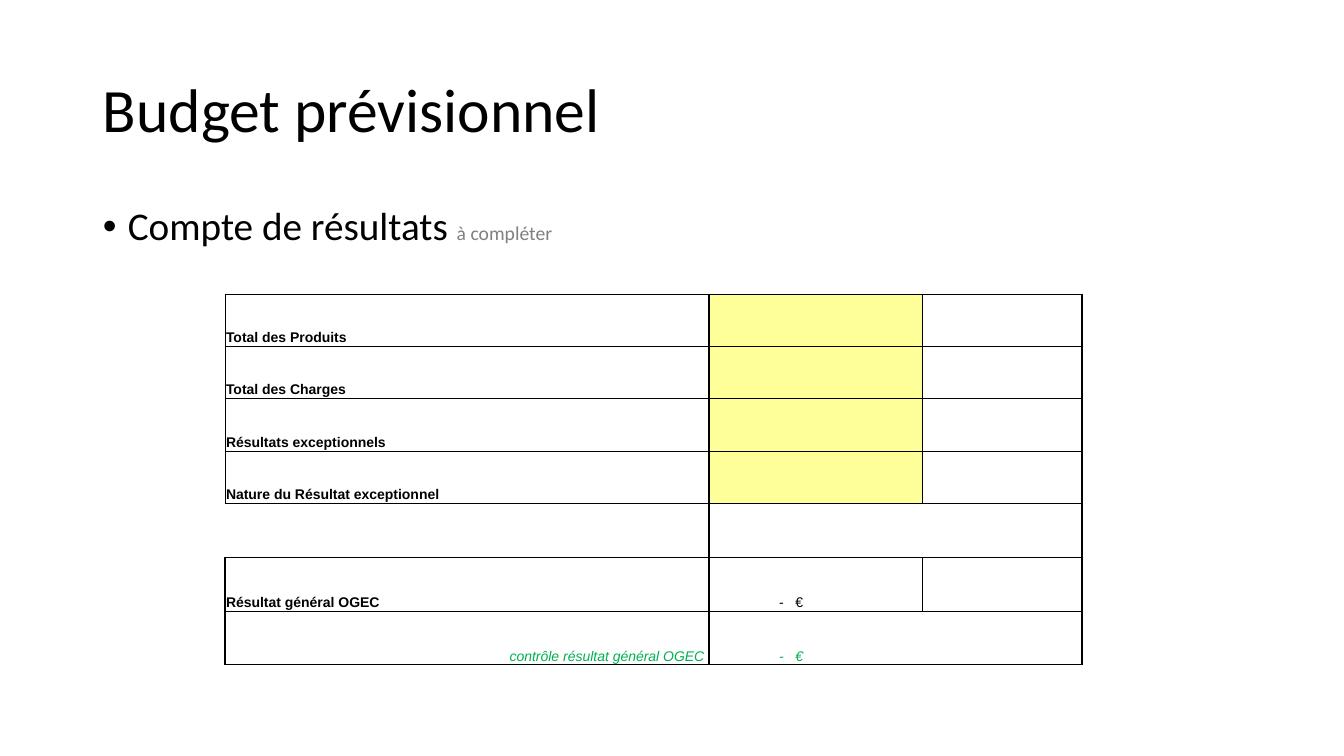
import pptx
import pptx.dml.color
import pptx.enum.text
import pptx.oxml
import pptx.oxml.ns
import pptx.util
from lxml import etree

RGBColor = pptx.dml.color.RGBColor
ANCHOR = pptx.enum.text.MSO_ANCHOR
ALIGN = pptx.enum.text.PP_ALIGN

BLACK = RGBColor(0x00, 0x00, 0x00)
GREY = RGBColor(0x80, 0x80, 0x80)
GREEN = RGBColor(0x00, 0xB0, 0x50)
YELLOW = RGBColor(0xFF, 0xFF, 0x99)
WHITE = RGBColor(0xFF, 0xFF, 0xFF)

SLIDE_SIZE = (1344, 756)
EMU_PER_PX = 914400 * 10 / 1008

COLUMN_WIDTHS = (484, 213, 160)
ROW_HEIGHTS = (52, 52, 53, 52, 55, 53, 54)
INPUT_LABELS = ("Total des Produits", "Total des Charges",
                "Résultats exceptionnels", "Nature du Résultat exceptionnel")
SPACER_ROW, RESULT_ROW, CHECK_ROW = 4, 5, 6

# Line weights in points, 0 for none: four vertical edges per row,
# then one horizontal edge above each row and one below the last.
VERTICAL_EDGES = [(0.5, 1, 0.5, 1)] * 4 + [(0, 1, 0, 1), (1, 1, 0.5, 1), (1, 1, 0, 1)]
HORIZONTAL_EDGES = (0.5, 0.5, 0.5, 0.5, 0.5, 1, 0.5, 1)


def px(length):
    return pptx.util.Emu(round(length * EMU_PER_PX))


def add_text(paragraph, text, *, font="Calibri", size=10, color=BLACK,
             bold=False, italic=False, spacing=0):
    """Append a run; spacing is extra points after each character."""
    run = paragraph.add_run()
    run.text = text
    run.font.name = font
    run.font.size = pptx.util.Pt(size)
    run.font.color.rgb = color
    run.font.bold = bold
    run.font.italic = italic
    if spacing:
        run.font._element.set("spc", str(round(spacing * 100)))


class BudgetSlide:
    cell_font = "Arial"
    line_spacing = 0.9

    def __init__(self, presentation):
        self.slide = presentation.slides.add_slide(presentation.slide_layouts[6])

    def text_box(self, left, top, width, height, anchor=ANCHOR.TOP):
        """Add a wrapping text box and return its first paragraph."""
        frame = self.slide.shapes.add_textbox(
            px(left), px(top), px(width), px(height)).text_frame
        frame.word_wrap = True
        frame.vertical_anchor = anchor
        paragraph = frame.paragraphs[0]
        paragraph.line_spacing = self.line_spacing
        return paragraph

    def bullet(self, paragraph, indent):
        properties = paragraph._p.get_or_add_pPr()
        properties.set("marL", str(px(indent)))
        properties.set("indent", str(-px(indent)))
        font = etree.SubElement(properties, pptx.oxml.ns.qn("a:buFont"))
        font.set("typeface", "Arial")
        mark = etree.SubElement(properties, pptx.oxml.ns.qn("a:buChar"))
        mark.set("char", "•")

    def table(self, left, top, widths, heights):
        table = self.slide.shapes.add_table(
            len(heights), len(widths), px(left), px(top),
            px(sum(widths)), px(sum(heights))).table
        table.first_row = table.horz_banding = False
        for column, width in zip(table.columns, widths):
            column.width = px(width)
        for row, height in zip(table.rows, heights):
            row.height = px(height)
        return table

    def cell_style(self, cell, fill, edges):
        """Set fill and the left, right, top and bottom line weights."""
        cell.margin_left = cell.margin_right = cell.margin_top = px(1)
        cell.margin_bottom = 0
        cell.vertical_anchor = ANCHOR.BOTTOM
        if fill is None:
            cell.fill.background()
        else:
            cell.fill.solid()
            cell.fill.fore_color.rgb = fill
        properties = cell._tc.get_or_add_tcPr()
        for position, (side, weight) in enumerate(zip("LRTB", edges)):
            paint = (f'<a:solidFill><a:srgbClr val="{BLACK}"/></a:solidFill>'
                     if weight else "<a:noFill/>")
            properties.insert(position, pptx.oxml.parse_xml(
                f'<a:ln{side} {pptx.oxml.ns.nsdecls("a")} '
                f'w="{pptx.util.Pt(weight)}">{paint}</a:ln{side}>'))

    def cell_text(self, cell, text, align=ALIGN.LEFT, **text_format):
        paragraph = cell.text_frame.paragraphs[0]
        paragraph.alignment = align
        add_text(paragraph, text, font=self.cell_font, **text_format)

    def amount(self, cell, **text_format):
        """Write an empty euro amount, indented, with a wide gap before the sign."""
        self.cell_text(cell, "- ", spacing=2.78, **text_format)
        self.cell_text(cell, "€", **text_format)
        cell.text_frame.paragraphs[0]._p.get_or_add_pPr().set("marL", str(px(69)))


def main():
    presentation = pptx.Presentation()
    presentation.slide_width, presentation.slide_height = map(px, SLIDE_SIZE)
    budget = BudgetSlide(presentation)

    title = budget.text_box(93, 40, 1159, 146, ANCHOR.MIDDLE)
    add_text(title, "Budget prévisionnel", size=44)

    heading = budget.text_box(93, 202, 1159, 480)
    heading.space_before = pptx.util.Pt(10)
    budget.bullet(heading, 25)
    add_text(heading, "Compte de résultats ", size=28)
    add_text(heading, "à compléter", size=14, color=GREY)

    accounts = budget.table(225, 294, COLUMN_WIDTHS, ROW_HEIGHTS)
    for row, verticals in enumerate(VERTICAL_EDGES):
        for column in range(len(COLUMN_WIDTHS)):
            fill = None
            if row < SPACER_ROW and column == 1:
                fill = YELLOW
            elif row == CHECK_ROW and column == 0:
                fill = WHITE
            budget.cell_style(accounts.cell(row, column), fill,
                              verticals[column:column + 2] + HORIZONTAL_EDGES[row:row + 2])

    for row, label in enumerate(INPUT_LABELS):
        budget.cell_text(accounts.cell(row, 0), label, bold=True)
    budget.cell_text(accounts.cell(RESULT_ROW, 0), "Résultat général OGEC", bold=True)
    budget.amount(accounts.cell(RESULT_ROW, 1))
    budget.cell_text(accounts.cell(CHECK_ROW, 0), "contrôle résultat général OGEC ",
                     ALIGN.RIGHT, color=GREEN, italic=True)
    budget.amount(accounts.cell(CHECK_ROW, 1), color=GREEN, italic=True)

    presentation.save("out.pptx")


if __name__ == "__main__":
    main()
